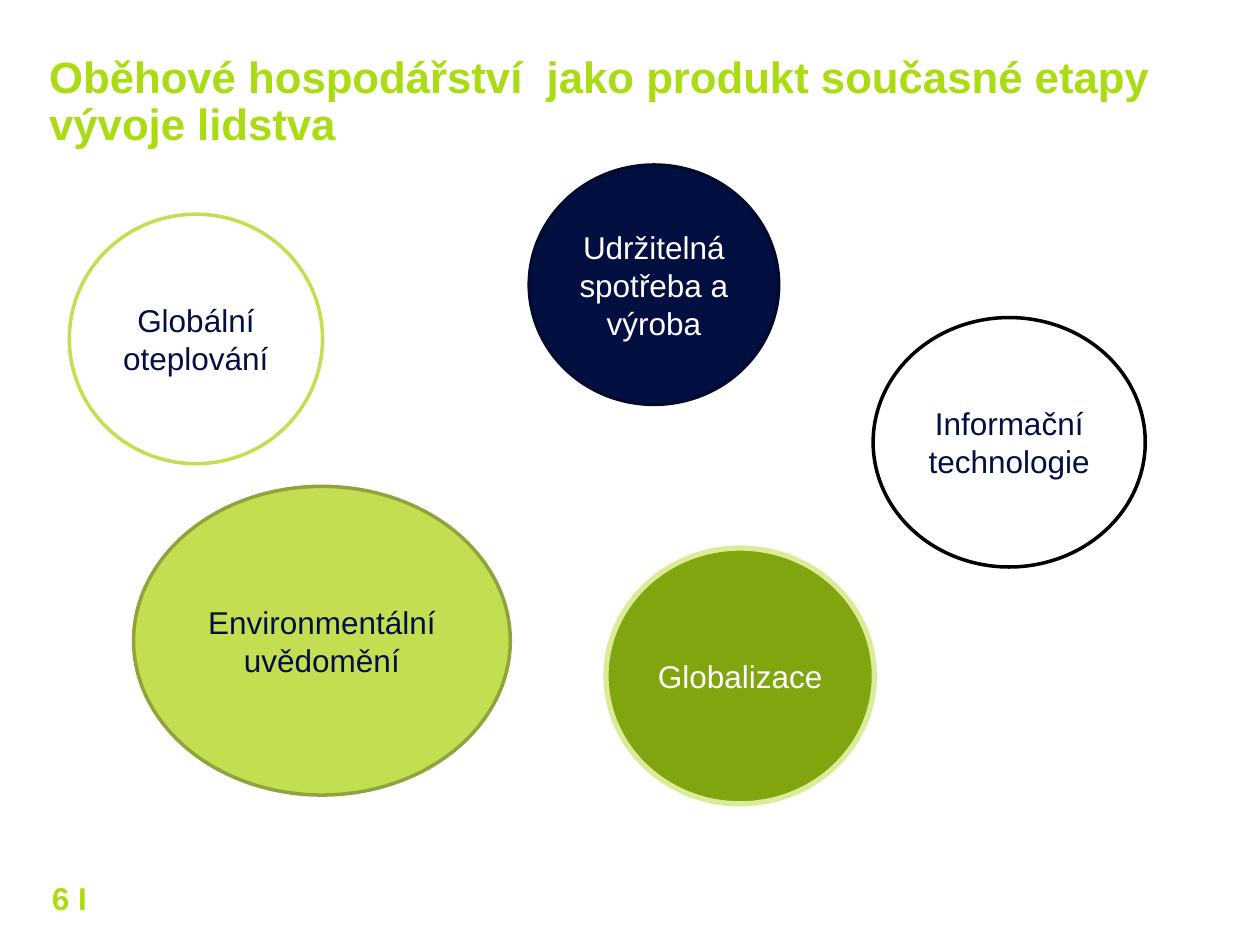
from pptx import Presentation
from pptx.dml.color import RGBColor
from pptx.enum.shapes import MSO_SHAPE
from pptx.enum.text import MSO_ANCHOR, PP_ALIGN
from pptx.util import Inches, Pt

COLORS = {
    "lime": "AADC14",
    "navy": "030F40",
    "dark navy": "020B2F",
    "white": "FFFFFF",
    "black": "000000",
    "light green": "C4DE51",
    "olive": "91A43C",
    "green": "80A50F",
    "pale green": "DCEB97",
}


def rgb(name):
    return RGBColor.from_string(COLORS[name])


def write_text(shape, text, color="lime", size=18, bold=False, align=PP_ALIGN.LEFT,
               anchor=MSO_ANCHOR.TOP, margins=(0, 0, 0, 0), line_spacing=None):
    """Fill a shape with one paragraph; margins are left, top, right, bottom in inches."""
    frame = shape.text_frame
    frame.word_wrap = True
    frame.vertical_anchor = anchor
    (frame.margin_left, frame.margin_top,
     frame.margin_right, frame.margin_bottom) = [Inches(margin) for margin in margins]
    paragraph = frame.paragraphs[0]
    paragraph.alignment = align
    paragraph.line_spacing = line_spacing
    run = paragraph.add_run()
    run.text = text
    run.font.name = "Arial"
    run.font.size = Pt(size)
    run.font.bold = bold
    run.font.color.rgb = rgb(color)


presentation = Presentation()
presentation.slide_width = Inches(10)
presentation.slide_height = Inches(7.5)
slide = presentation.slides.add_slide(presentation.slide_layouts[6])

page_number = slide.shapes.add_textbox(Inches(0), Inches(6.98), Inches(0.75), Inches(0.51))
write_text(page_number, "6 I", bold=True, align=PP_ALIGN.RIGHT, margins=(0, 0, 0.06, 0))

title = slide.shapes.add_textbox(Inches(0.39), Inches(0.44), Inches(8.94), Inches(1.53))
write_text(title, "Oběhové hospodářství  jako produkt současné etapy vývoje lidstva",
           size=25, bold=True, line_spacing=0.9)

# text, (left, top, width, height), fill, line, line width, text colour
topics = [
    ("Globální oteplování", (0.55, 1.7, 2.01, 1.98), "white", "light green", 2, "navy"),
    ("Environmentální uvědomění", (1.06, 3.86, 2.99, 2.45), "light green", "olive", 2, "navy"),
    ("Udržitelná spotřeba a výroba", (4.2, 1.31, 1.98, 1.9), "navy", "dark navy", 2, "white"),
    ("Informační technologie", (6.93, 2.52, 2.16, 1.98), "white", "black", 2, "navy"),
    ("Globalizace", (4.81, 4.35, 2.13, 2.03), "green", "pale green", 3, "white"),
]
for text, box, fill, line, line_width, text_color in topics:
    ellipse = slide.shapes.add_shape(MSO_SHAPE.OVAL, *[Inches(length) for length in box])
    ellipse.shadow.inherit = False
    ellipse.fill.solid()
    ellipse.fill.fore_color.rgb = rgb(fill)
    ellipse.line.color.rgb = rgb(line)
    ellipse.line.width = Pt(line_width)
    write_text(ellipse, text, color=text_color, align=PP_ALIGN.CENTER,
               anchor=MSO_ANCHOR.MIDDLE, margins=(0.1, 0.05, 0.1, 0.05))

presentation.save("out.pptx")
